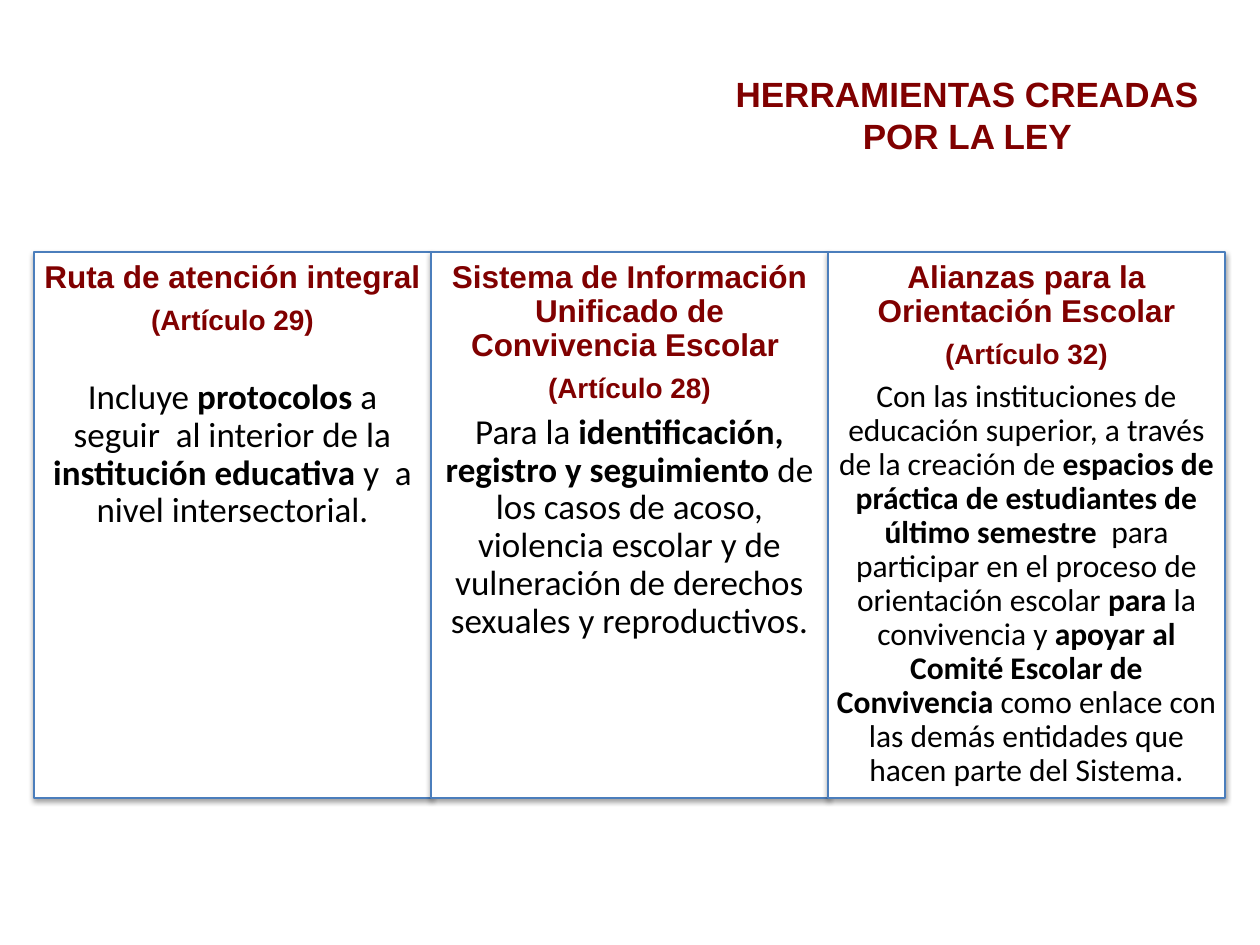
import pptx
import pptx.dml.color
import pptx.enum.shapes
import pptx.enum.text
import pptx.oxml
import pptx.oxml.ns
import pptx.util

PX = 914400 // 126
MAROON, BLACK, WHITE, BLUE = "800000", "000000", "FFFFFF", "4B7EBC"
HEADING_FONT, BODY_FONT = "Arial", "Calibri"
SPACE_RATIO = 0.35

LEFT, TOP, WIDTH, HEIGHT = 34, 252, 397, 546

# Heading, article, extra gap below the article, body size, body runs (text, bold)
TOOLS = [
    ("Ruta de atención integral", "(Artículo 29)", 19, 20, [
        ("Incluye ", False),
        ("protocolos", True),
        (" a seguir  al interior de la ", False),
        ("institución educativa ", True),
        ("y  a nivel intersectorial.", False),
    ]),
    ("Sistema de Información Unificado de Convivencia Escolar ", "(Artículo 28)", 0, 20, [
        ("Para la ", False),
        ("identificación, registro y seguimiento ", True),
        ("de los casos de acoso, violencia escolar y de vulneración de "
         "derechos sexuales y reproductivos.", False),
    ]),
    ("Alianzas para la Orientación Escolar", "(Artículo 32)", 0, 18, [
        ("Con las instituciones de educación superior, a través de la creación de ", False),
        ("espacios de práctica de estudiantes de último semestre  ", True),
        ("para participar en el proceso de orientación escolar ", False),
        ("para", True),
        (" la convivencia y ", False),
        ("apoyar al Comité Escolar de Convivencia ", True),
        ("como enlace con las demás entidades que hacen parte del Sistema.", False),
    ]),
]


def px(n):
    return pptx.util.Emu(n * PX)


def rgb(color):
    return pptx.dml.color.RGBColor.from_string(color)


def add_soft_shadow(sp):
    ns = pptx.oxml.ns.nsdecls("a")
    effects = sp._element.spPr.find(pptx.oxml.ns.qn("a:effectLst"))
    effects.append(pptx.oxml.parse_xml(
        f'<a:outerShdw {ns} blurRad="40000" dist="20000" dir="5400000" rotWithShape="0">'
        f'<a:srgbClr val="{BLACK}"><a:alpha val="38000"/></a:srgbClr></a:outerShdw>'))


class SlideBuilder:
    def __init__(self, prs):
        self.s = prs.slides.add_slide(prs.slide_layouts[5])

    def paragraph(self, tf, runs, size, font, color, first=False):
        """Add a centred paragraph from (text, bold) pairs."""
        p = tf.paragraphs[0] if first else tf.add_paragraph()
        p.alignment = pptx.enum.text.PP_ALIGN.CENTER
        p.space_before = pptx.util.Pt(0)
        for text, bold in runs:
            r = p.add_run()
            r.text = text
            r.font.size = pptx.util.Pt(size)
            r.font.name = font
            r.font.bold = bold
            r.font.color.rgb = rgb(color)
        return p

    def title(self, lines, x, y, w, h):
        sp = self.s.shapes.title
        sp.left, sp.top, sp.width, sp.height = px(x), px(y), px(w), px(h)
        tf = sp.text_frame
        tf.word_wrap = True
        tf.vertical_anchor = pptx.enum.text.MSO_ANCHOR.TOP
        for i, line in enumerate(lines):
            self.paragraph(tf, [(line, True)], 20, HEADING_FONT, MAROON, i == 0)

    def card(self, x, y, w, h, heading, article, gap, body_size, body):
        sp = self.s.shapes.add_shape(
            pptx.enum.shapes.MSO_SHAPE.RECTANGLE, px(x), px(y), px(w), px(h))
        sp.fill.solid()
        sp.fill.fore_color.rgb = rgb(WHITE)
        sp.line.color.rgb = rgb(BLUE)
        sp.line.width = pptx.util.Pt(0.75)
        sp.shadow.inherit = False
        add_soft_shadow(sp)
        tf = sp.text_frame
        tf.word_wrap = True
        tf.vertical_anchor = pptx.enum.text.MSO_ANCHOR.TOP
        tf.margin_left = tf.margin_right = tf.margin_top = tf.margin_bottom = px(9)
        rows = [
            ([(heading, True)], 18, HEADING_FONT, MAROON, 0),
            ([(article, True)], 16, HEADING_FONT, MAROON, gap),
            (body, body_size, BODY_FONT, BLACK, 0),
        ]
        for i, (runs, size, font, color, extra) in enumerate(rows):
            p = self.paragraph(tf, runs, size, font, color, i == 0)
            p.line_spacing = 0.9
            p.space_after = pptx.util.Pt(size * SPACE_RATIO + extra)


def main():
    prs = pptx.Presentation()
    prs.slide_width, prs.slide_height = px(1260), px(945)
    slide = SlideBuilder(prs)
    slide.title(["HERRAMIENTAS CREADAS ", "POR LA LEY "], 684, 66, 576, 97)
    for i, tool in enumerate(TOOLS):
        slide.card(LEFT + i * WIDTH, TOP, WIDTH, HEIGHT, *tool)
    prs.save("out.pptx")


if __name__ == "__main__":
    main()
